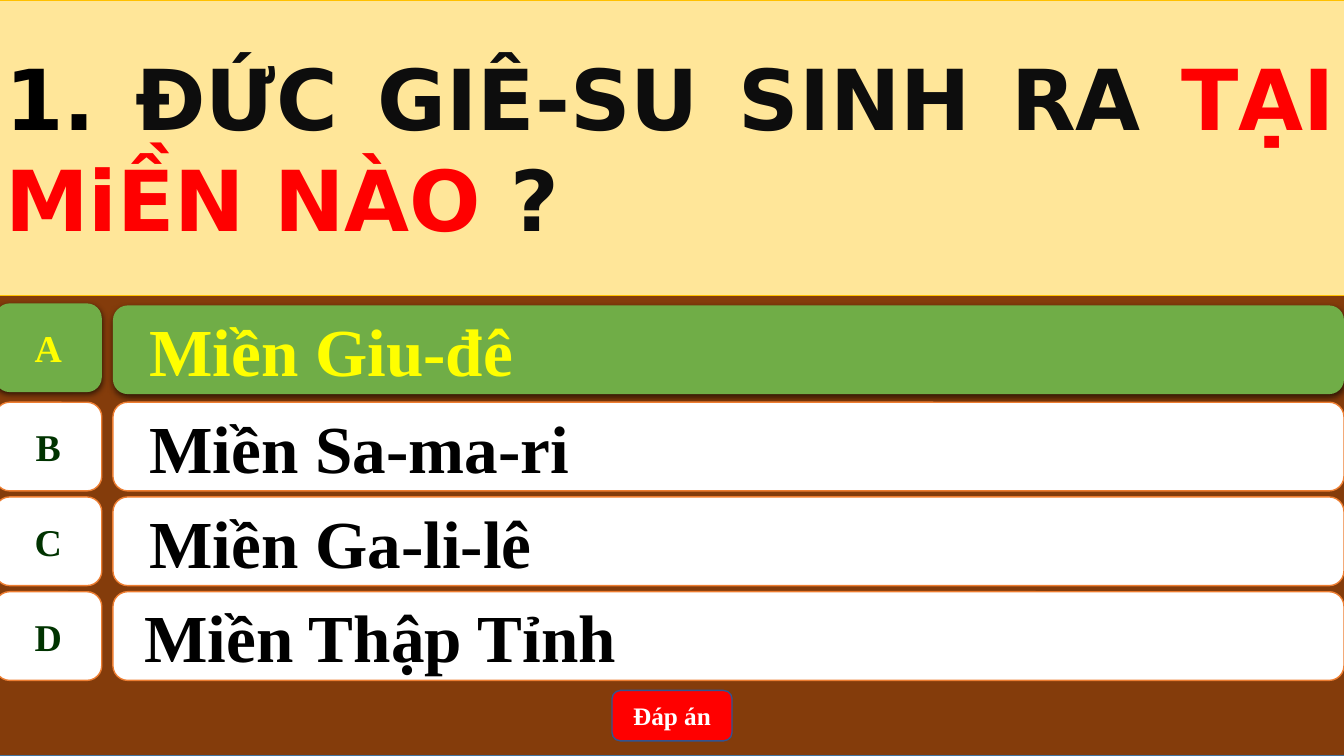
from dataclasses import dataclass

from lxml.etree import SubElement as Sub
from pptx import Presentation
from pptx.dml.color import RGBColor as RGB
from pptx.enum.shapes import MSO_SHAPE as Form
from pptx.enum.text import MSO_ANCHOR as Anchor, MSO_AUTO_SIZE as Auto, PP_ALIGN as Align
from pptx.oxml.ns import qn
from pptx.util import Inches, Pt


@dataclass(frozen=True)
class Theme:
    brown: str = "843C0B"
    edge: str = "43739E"
    sand: str = "FFE699"
    gold: str = "FFC000"
    white: str = "FFFFFF"
    orange: str = "ED7D31"
    green: str = "70AD47"
    yellow: str = "FFFF00"
    forest: str = "003300"
    black: str = "000000"
    ink: str = "0D0D0D"
    red: str = "FF0000"
    blue: str = "325491"
    head: str = "DejaVu Sans"
    body: str = "Times New Roman"
    ask: int = 60
    answer: int = 48
    letter: int = 27
    button: int = 18


class Quiz:
    def __init__(self, slide, theme):
        self.slide = slide
        self.theme = theme

    def paint(self, shape, fill, line=None, width=1):
        shape.fill.solid()
        shape.fill.fore_color.rgb = RGB.from_string(fill)
        if line:
            shape.line.color.rgb = RGB.from_string(line)
            shape.line.width = Pt(width)
        else:
            shape.line.fill.background()

    def label(self, shape, runs, size, font, align, wrap=True, indent=0):
        frame = shape.text_frame
        frame.auto_size = Auto.NONE
        frame.word_wrap = wrap
        frame.vertical_anchor = Anchor.MIDDLE
        para = frame.paragraphs[0]
        para.alignment = align
        if indent:
            para._p.get_or_add_pPr().set("marL", str(Inches(indent)))
        for text, color in runs:
            run = para.add_run()
            run.text = text
            run.font.size = Pt(size)
            run.font.name = font
            run.font.bold = True
            run.font.color.rgb = RGB.from_string(color)

    def box(self, form, left, top, width, height, fill, line=None):
        shape = self.slide.shapes.add_shape(
            form, Inches(left), Inches(top), Inches(width), Inches(height))
        shape.shadow.inherit = False
        self.paint(shape, fill, line)
        return shape

    def glow(self, shape):
        effects = shape._element.spPr.find(qn("a:effectLst"))
        shade = Sub(effects, qn("a:outerShdw"), blurRad=str(Pt(4.5)),
                    dist=str(Pt(1.5)), dir="5400000", algn="ctr", rotWithShape="0")
        color = Sub(shade, qn("a:srgbClr"), val=self.theme.black)
        Sub(color, qn("a:alpha"), val="63000")

    def title(self, runs, left, top, width, height):
        t = self.theme
        title = self.slide.shapes.title
        title.left, title.top = Inches(left), Inches(top)
        title.width, title.height = Inches(width), Inches(height)
        self.paint(title, t.sand, t.gold, 0.5)
        self.label(title, runs, t.ask, t.head, Align.JUSTIFY)
        # Bring the title in front of the backdrop
        self.slide.shapes._spTree.append(title._element)

    def choice(self, letter, text, top, drop=0, indent=0.22, right=False):
        t = self.theme
        fill, line = (t.green, None) if right else (t.white, t.orange)
        key = self.box(Form.FLOWCHART_ALTERNATE_PROCESS, -0.05, top, 1.06, 0.88, fill, line)
        bar = self.box(Form.ROUNDED_RECTANGLE, 1.12, top + drop, 12.21, 0.88, fill, line)
        self.label(key, [(letter, t.yellow if right else t.forest)],
                   t.letter, t.body, Align.CENTER, wrap=False)
        self.label(bar, [(text, t.yellow if right else t.black)],
                   t.answer, t.body, Align.LEFT, indent=indent)
        if right:
            self.glow(key)
            self.glow(bar)

    def button(self, text, left, top, width, height):
        t = self.theme
        shape = self.box(Form.ROUNDED_RECTANGLE, left, top, width, height, t.red, t.blue)
        self.label(shape, [(text, t.white)], t.button, t.body, Align.CENTER)


def main():
    deck = Presentation()
    deck.slide_width, deck.slide_height = Inches(13.33), Inches(7.5)
    theme = Theme()
    quiz = Quiz(deck.slides.add_slide(deck.slide_layouts[5]), theme)

    # Backdrop and question
    quiz.box(Form.RECTANGLE, -0.05, 0, 13.39, 7.5, theme.brown, theme.edge)
    quiz.title([("1. ", theme.black), ("ĐỨC GIÊ-SU SINH RA ", theme.ink),
                ("TẠI MiỀN NÀO", theme.red), (" ?", theme.ink)],
               -0.05, 0, 13.39, 2.93)

    # Right answer, then the others at an equal pitch
    quiz.choice("A", "Miền Giu-đê", 3.01, drop=0.02, right=True)
    others = [("B", "Miền Sa-ma-ri", 0.22), ("C", "Miền Ga-li-lê", 0.22),
              ("D", "Miền Thập Tỉnh", 0.17)]
    for row, (letter, text, indent) in enumerate(others):
        quiz.choice(letter, text, 3.99 + 0.94 * row, indent=indent)

    # Answer button
    quiz.button("Đáp án", 6.07, 6.85, 1.19, 0.5)

    deck.save("out.pptx")


if __name__ == "__main__":
    main()
